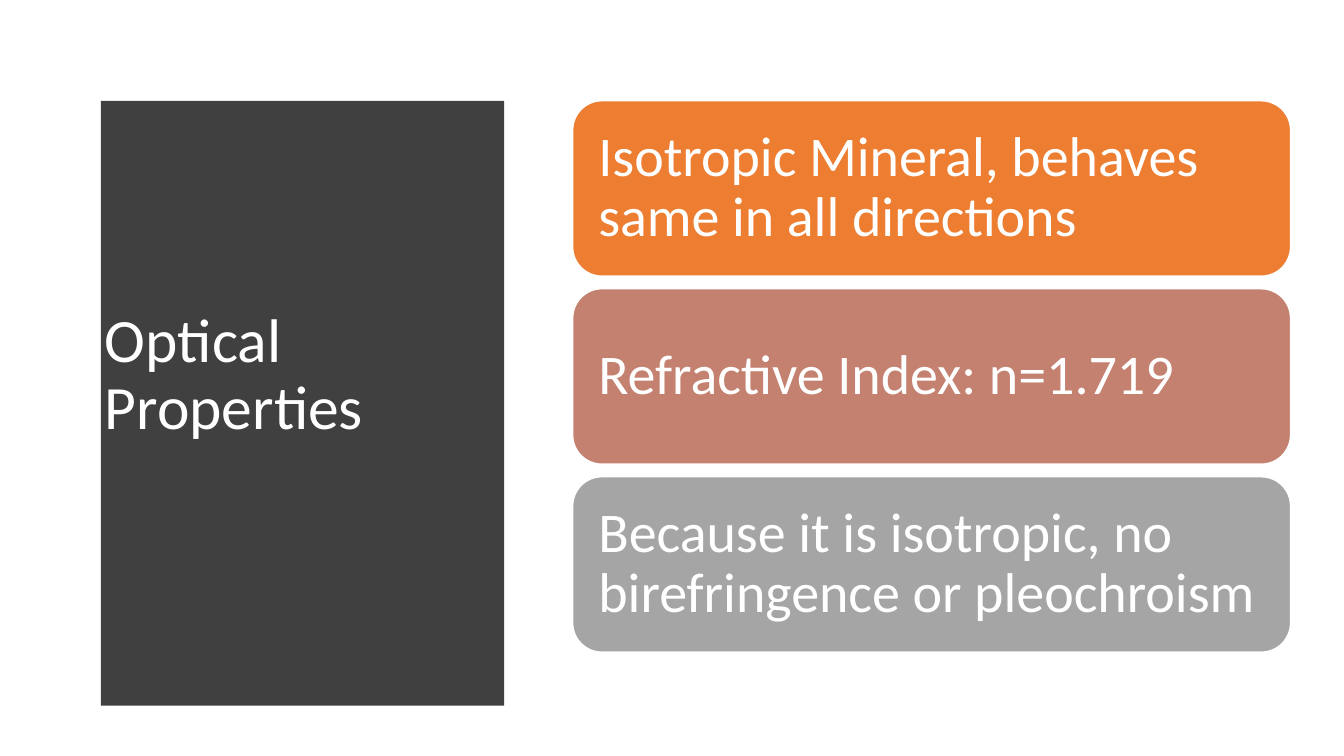
from dataclasses import dataclass
from pptx import Presentation
from pptx.dml.color import RGBColor
from pptx.enum.shapes import MSO_SHAPE
from pptx.enum.text import MSO_ANCHOR, MSO_AUTO_SIZE, PP_ALIGN
from pptx.util import Inches, Pt

ROUNDED = MSO_SHAPE.ROUNDED_RECTANGLE
MIDDLE = MSO_ANCHOR.MIDDLE
LEFT = PP_ALIGN.LEFT
NO_AUTOFIT = MSO_AUTO_SIZE.NONE


@dataclass(frozen=True)
class Theme:
    font: str = "Calibri"
    white: RGBColor = RGBColor.from_string("FFFFFF")
    panel: RGBColor = RGBColor.from_string("404040")
    title_size: Pt = Pt(44)
    card_size: Pt = Pt(40)


theme = Theme()


def write_text(shape, text, size, inset):
    frame = shape.text_frame
    frame.text = text
    frame.word_wrap = True
    frame.auto_size = NO_AUTOFIT
    frame.vertical_anchor = MIDDLE
    frame.margin_left = frame.margin_right = Inches(inset)
    paragraph = frame.paragraphs[0]
    paragraph.alignment = LEFT
    paragraph.line_spacing = 0.9
    paragraph.font.name = theme.font
    paragraph.font.size = size
    paragraph.font.color.rgb = theme.white


presentation = Presentation()
presentation.slide_width = Inches(13.33)
presentation.slide_height = Inches(7.5)
slide = presentation.slides.add_slide(presentation.slide_layouts[5])

panel_left, panel_top, panel_bottom = 0.53, 0.52, 6.96
edge_right, bulge, bulge_center = 5.08, 0.24, 3.6
curve_steps = 48
curve = []
for step in range(curve_steps + 1):
    y = panel_top + (panel_bottom - panel_top) * step / curve_steps
    reach = bulge_center - panel_top if y < bulge_center else panel_bottom - bulge_center
    x = edge_right + bulge * (1 - (abs(y - bulge_center) / reach) ** 2.05)
    curve.append((x, y))

builder = slide.shapes.build_freeform(panel_left, panel_top, scale=Inches(1))
builder.add_line_segments(curve + [(panel_left, panel_bottom)], close=True)
panel = builder.convert_to_shape()
panel.shadow.inherit = False
panel.fill.solid()
panel.fill.fore_color.rgb = theme.panel
panel.line.fill.background()

title = slide.shapes.title
title.left, title.top = Inches(0.94), Inches(1.11)
title.width, title.height = Inches(3.74), Inches(5.24)
write_text(title, "Optical Properties", theme.title_size, 0.1)
panel.element.addnext(title.element)

cards = [
    ("Isotropic Mineral, behaves same in all directions", "ED7D31"),
    ("Refractive Index: n=1.719", "C48170"),
    ("Because it is isotropic, no birefringence or pleochroism", "A5A5A5"),
]
card_left, card_top, card_width, card_height = 5.68, 1, 7.12, 1.74
card_pitch = 1.865

for row, (text, color) in enumerate(cards):
    card = slide.shapes.add_shape(
        ROUNDED,
        Inches(card_left),
        Inches(card_top + row * card_pitch),
        Inches(card_width),
        Inches(card_height),
    )
    card.shadow.inherit = False
    card.fill.solid()
    card.fill.fore_color.rgb = RGBColor.from_string(color)
    card.line.color.rgb = theme.white
    card.line.width = Pt(1)
    write_text(card, text, theme.card_size, 0.17)

presentation.save("out.pptx")
